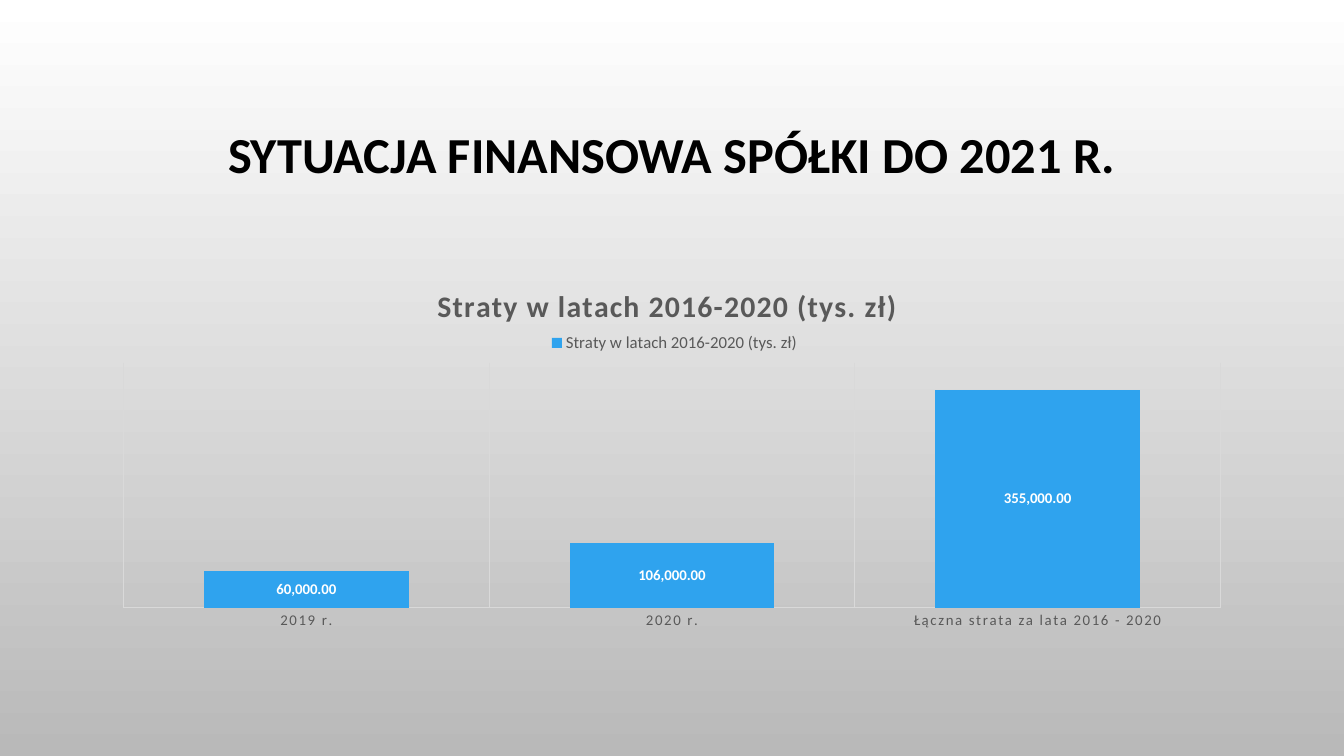
from lxml import etree
from pptx import Presentation
from pptx import util as u
from pptx.chart import data
from pptx.dml.color import RGBColor
from pptx.enum import chart as charts
from pptx.enum import text
from pptx.oxml import ns

WHITE = RGBColor(0xFF, 0xFF, 0xFF)
SILVER = RGBColor(0xB9, 0xB9, 0xB9)
BLACK = RGBColor(0, 0, 0)
GRAY = RGBColor(0x59, 0x59, 0x59)
GRID = RGBColor(0xD9, 0xD9, 0xD9)
BLUE = RGBColor(0x2F, 0xA3, 0xEE)

LOSSES = "Straty w latach 2016-2020 (tys. zł)"
LOSS_BY_PERIOD = {
    "2019 r.": 60000,
    "2020 r.": 106000,
    "Łączna strata za lata 2016 - 2020": 355000,
}
NUMBER_FORMAT = "#,##0.00"


class Deck:
    font_name = "Calibri"

    def __init__(self, presentation):
        self.slide = presentation.slides.add_slide(presentation.slide_layouts[6])

    def style(self, font, size, color, bold=False):
        font.name = self.font_name
        font.size = u.Pt(size)
        font.color.rgb = color
        font.bold = bold

    def background(self, top, bottom):
        fill = self.slide.background.fill
        fill.gradient()
        fill.gradient_angle = 270
        for stop, color in zip(fill.gradient_stops, (top, bottom)):
            stop.color.rgb = color

    def title(self, words, box):
        frame = self.slide.shapes.add_textbox(*map(u.Pt, box)).text_frame
        frame.word_wrap = True
        frame.vertical_anchor = text.MSO_ANCHOR.MIDDLE
        paragraph = frame.paragraphs[0]
        paragraph.text = words
        paragraph.alignment = text.PP_ALIGN.CENTER
        paragraph.line_spacing = 0.9
        self.style(paragraph.font, 36, BLACK, True)

    def place(self, parent, index, **values):
        for old in parent.findall(ns.qn("c:layout")):
            parent.remove(old)
        layout = etree.Element(ns.qn("c:layout"))
        manual = etree.SubElement(layout, ns.qn("c:manualLayout"))
        for name, value in values.items():
            etree.SubElement(manual, ns.qn(f"c:{name}")).set("val", str(value))
        parent.insert(index, layout)

    def column_chart(self, name, values, box):
        chart_data = data.CategoryChartData(number_format=NUMBER_FORMAT)
        chart_data.categories = list(values)
        chart_data.add_series(name, list(values.values()))
        chart = self.slide.shapes.add_chart(
            charts.XL_CHART_TYPE.COLUMN_STACKED, *map(u.Pt, box), chart_data
        ).chart
        self.style(chart.font, 10, BLACK)
        self.heading(chart, name)
        self.legend(chart)
        self.axes(chart)
        self.columns(chart.plots[0])
        self.place(chart._chartSpace.find(".//" + ns.qn("c:plotArea")), 0,
                   layoutTarget="inner", xMode="edge", yMode="edge",
                   x=0.02, y=0.27, w=0.96, h=0.65)

    def heading(self, chart, name):
        chart.has_title = True
        paragraph = chart.chart_title.text_frame.paragraphs[0]
        paragraph.text = name
        self.style(paragraph.font, 21.3, GRAY, True)
        paragraph.font._element.set("spc", "100")
        self.place(chart.chart_title._element, 1,
                   xMode="edge", yMode="edge", x=0.29, y=0.05)

    def legend(self, chart):
        chart.has_legend = True
        legend = chart.legend
        legend.position = charts.XL_LEGEND_POSITION.TOP
        legend.include_in_layout = False
        self.style(legend.font, 12, GRAY)
        self.place(legend._element, 1, xMode="edge", yMode="edge", x=0.39, y=0.18)

    def axes(self, chart):
        chart.value_axis.visible = False
        chart.value_axis.has_major_gridlines = False
        chart.value_axis.minimum_scale = 0
        chart.value_axis.maximum_scale = 400000
        axis = chart.category_axis
        axis.major_tick_mark = charts.XL_TICK_MARK.NONE
        axis.has_major_gridlines = True
        for line in (axis.format.line, axis.major_gridlines.format.line):
            line.color.rgb = GRID
            line.width = u.Pt(0.75)
        font = axis.tick_labels.font
        self.style(font, 10.6, GRAY)
        font._element.set("spc", "120")

    def columns(self, plot):
        plot.gap_width = 79
        plot.overlap = 100
        plot.vary_by_categories = False
        fill = plot.series[0].format.fill
        fill.solid()
        fill.fore_color.rgb = BLUE
        labels = plot.series[0].data_labels
        labels.show_value = True
        labels.number_format = NUMBER_FORMAT
        labels.number_format_is_linked = False
        labels.position = charts.XL_LABEL_POSITION.CENTER
        self.style(labels.font, 10.6, WHITE, True)


def main():
    presentation = Presentation()
    presentation.slide_width = u.Pt(960)
    presentation.slide_height = u.Pt(540)
    deck = Deck(presentation)
    deck.background(WHITE, SILVER)
    deck.title("SYTUACJA FINANSOWA SPÓŁKI DO 2021 R.", (72, 49, 816, 126))
    deck.column_chart(LOSSES, LOSS_BY_PERIOD, (72, 186.5, 816, 269.3))
    presentation.save("out.pptx")


if __name__ == "__main__":
    main()
